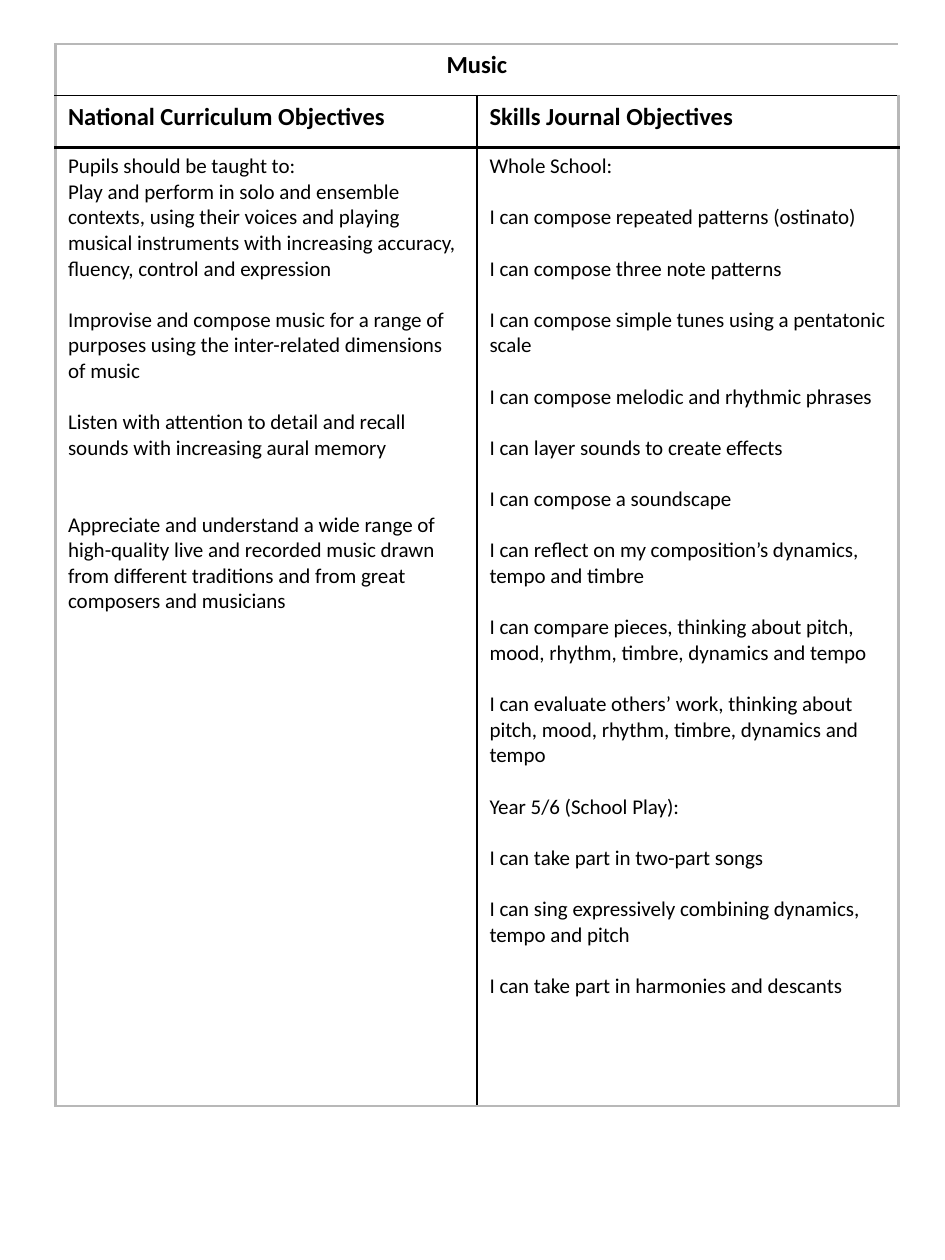
from dataclasses import dataclass
from lxml.etree import SubElement
from pptx import Presentation
from pptx.dml.color import RGBColor as RGB
from pptx.enum.text import PP_ALIGN as Align
from pptx.oxml.ns import qn
from pptx.util import Inches, Pt


@dataclass(frozen=True)
class Theme:
    font: str = "Calibri"
    ink: str = "000000"
    edge: str = "B8B8B8"
    paper: str = "FFFFFF"
    head: int = 14
    body: int = 12
    gap: float = 14.65


theme = Theme()

# Each entry is a paragraph and the number of line gaps above it.
goals = [
    ("Pupils should be taught to:", 0),
    ("Play and perform in solo and ensemble contexts, using their voices and playing "
     "musical instruments with increasing accuracy, fluency, control and expression", 0),
    ("Improvise and compose music for a range of purposes using the inter-related "
     "dimensions of music", 1),
    ("Listen with attention to detail and recall sounds with increasing aural memory", 1),
    ("Appreciate and understand a wide range of high-quality live and recorded music "
     "drawn from different traditions and from great composers and musicians", 2),
]
skills = [
    "Whole School:",
    "I can compose repeated patterns (ostinato)",
    "I can compose three note patterns",
    "I can compose simple tunes using a pentatonic scale",
    "I can compose melodic and rhythmic phrases",
    "I can layer sounds to create effects",
    "I can compose a soundscape",
    "I can reflect on my composition’s dynamics, tempo and timbre",
    "I can compare pieces, thinking about pitch, mood, rhythm, timbre, dynamics and tempo",
    "I can evaluate others’ work, thinking about pitch, mood, rhythm, timbre, "
    "dynamics and tempo",
    "Year 5/6 (School Play):",
    "I can take part in two-part songs",
    "I can sing expressively combining dynamics, tempo and pitch",
    "I can take part in harmonies and descants",
]


def write(cell, items, size, bold=False):
    """Fill a cell with (text, gaps above) paragraphs."""
    frame = cell.text_frame
    for i, (text, gaps) in enumerate(items):
        para = frame.add_paragraph() if i else frame.paragraphs[0]
        para.text = text
        para.space_before = Pt(gaps * theme.gap)
        font = para.font
        font.name, font.size, font.bold = theme.font, Pt(size), bold
        font.color.rgb = RGB.from_string(theme.ink)


def rule(cell, side, color, width):
    """Draw one border of a cell; call before the fill is set."""
    line = SubElement(cell._tc.get_or_add_tcPr(), qn(f"a:ln{side}"), w=str(Pt(width)))
    fill = SubElement(line, qn("a:solidFill"))
    SubElement(fill, qn("a:srgbClr"), val=color)


deck = Presentation()
deck.slide_width, deck.slide_height = Inches(7.5), Inches(10)
slide = deck.slides.add_slide(deck.slide_layouts[6])

heights = [0.41, 0.41, 7.61]
frame = slide.shapes.add_table(3, 2, Inches(0.44), Inches(0.35),
                               Inches(6.69), Inches(sum(heights)))
table = frame.table
table.first_row = table.horz_banding = False
for col in table.columns:
    col.width = Inches(3.345)
for row, height in zip(table.rows, heights):
    row.height = Inches(height)

# Horizontal rules from top to bottom; the sides are pale, the middle is dark.
levels = [(theme.edge, 1), (theme.ink, 1), (theme.ink, 1.5), (theme.edge, 1)]
side, middle = (theme.edge, 1.5), (theme.ink, 1)
for r in range(3):
    for c in range(2):
        cell = table.cell(r, c)
        inner = middle if r else None
        marks = [("L", inner if c else side), ("R", side if c else inner),
                 ("T", levels[r]), ("B", levels[r + 1])]
        for name, mark in marks:
            if mark:
                rule(cell, name, *mark)
        cell.fill.solid()
        cell.fill.fore_color.rgb = RGB.from_string(theme.paper)

title = table.cell(0, 0)
title.merge(table.cell(0, 1))
write(title, [("Music", 0)], theme.head, True)
title.text_frame.paragraphs[0].alignment = Align.CENTER
for c, text in enumerate(["National Curriculum Objectives", "Skills Journal Objectives"]):
    write(table.cell(1, c), [(text, 0)], theme.head, True)
write(table.cell(2, 0), goals, theme.body)
write(table.cell(2, 1), [(text, min(i, 1)) for i, text in enumerate(skills)], theme.body)

deck.save("out.pptx")
